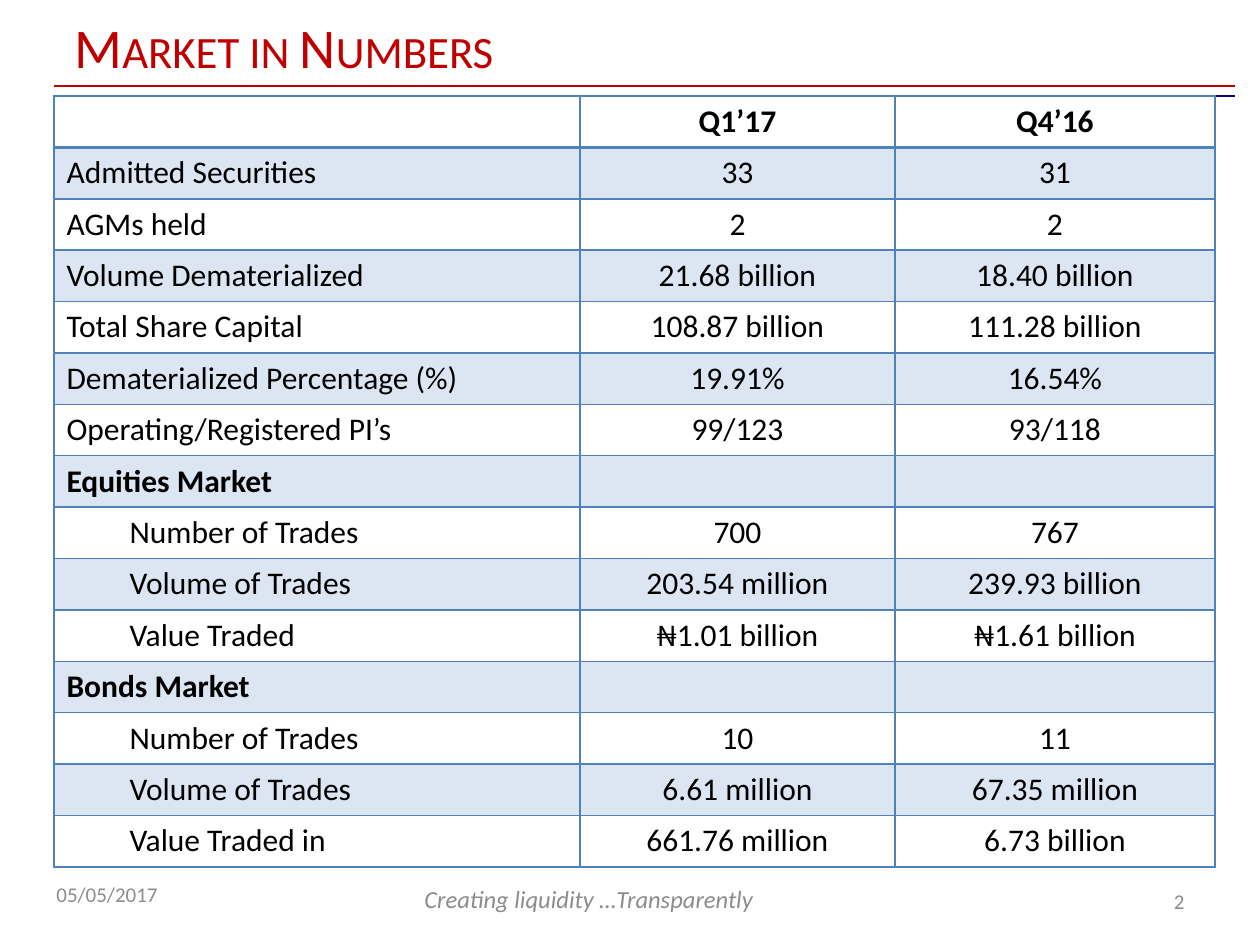
import dataclasses

import lxml.etree
import pptx
import pptx.dml.color
import pptx.enum.shapes
import pptx.enum.text
import pptx.oxml.ns
import pptx.util

ALIGN = pptx.enum.text.PP_ALIGN
ANCHOR = pptx.enum.text.MSO_ANCHOR
qn = pptx.oxml.ns.qn


@dataclasses.dataclass(frozen=True)
class Theme:
    font: str = "Calibri"
    title: str = "C00000"
    rule: str = "0A0571"
    ink: str = "000000"
    muted: str = "8C8C8C"
    grid: str = "4F81BD"
    band: str = "DCE6F2"
    title_size: int = 32
    table_size: int = 18
    tagline_size: int = 14
    footer_size: int = 12
    line: float = 0.75
    border: int = 1
    header_border: int = 2


def px(n):
    return round(n * 914400 / 126)


def rgb(color):
    return pptx.dml.color.RGBColor.from_string(color)


def put_text(tf, text, font, size, color, bold=False, italic=False,
             small_caps=False, align=ALIGN.LEFT, indent=0):
    p = tf.paragraphs[0]
    p.alignment = align
    if indent:
        p.level = 1
        pPr = p._p.get_or_add_pPr()
        pPr.set("marL", str(px(indent)))
        pPr.set("indent", "0")
    r = p.add_run()
    r.text = text
    r.font.name = font
    r.font.size = pptx.util.Pt(size)
    r.font.color.rgb = rgb(color)
    r.font.bold = bold
    r.font.italic = italic
    if small_caps:
        r.font._element.set("cap", "small")


class SlideBuilder:
    def __init__(self, prs, theme):
        self.theme = theme
        self.s = prs.slides.add_slide(prs.slide_layouts[6])

    def rule(self, x1, x2, y, color):
        sp = self.s.shapes.add_connector(
            pptx.enum.shapes.MSO_CONNECTOR.STRAIGHT, px(x1), px(y), px(x2), px(y))
        sp.line.color.rgb = rgb(color)
        sp.line.width = pptx.util.Pt(self.theme.line)
        lxml.etree.SubElement(sp._element.spPr, qn("a:effectLst"))

    def text(self, x, y, w, h, text, size, color, anchor=ANCHOR.MIDDLE, **fmt):
        tf = self.s.shapes.add_textbox(px(x), px(y), px(w), px(h)).text_frame
        tf.word_wrap = True
        tf.vertical_anchor = anchor
        put_text(tf, text, self.theme.font, size, color, **fmt)

    def borders(self, cell, **widths):
        tcPr = cell._tc.get_or_add_tcPr()
        for side in ("L", "R", "T", "B"):
            width = pptx.util.Pt(widths.get(side, self.theme.border))
            ln = lxml.etree.SubElement(tcPr, qn("a:ln" + side), w=str(width))
            fill = lxml.etree.SubElement(ln, qn("a:solidFill"))
            lxml.etree.SubElement(fill, qn("a:srgbClr"), val=self.theme.grid)

    def table(self, x, y, h, widths, rows, sections, indent):
        t = self.theme
        table = self.s.shapes.add_table(
            len(rows), len(widths), px(x), px(y), px(sum(widths)), px(h)).table
        table.first_row = table.horz_banding = False
        for col, width in zip(table.columns, widths):
            col.width = px(width)
        in_section = False
        for i, row in enumerate(rows):
            table.rows[i].height = px(h / len(rows))
            heading = row[0] in sections
            for j, text in enumerate(row):
                cell = table.cell(i, j)
                edge = {0: "B", 1: "T"}.get(i)
                self.borders(cell, **({edge: t.header_border} if edge else {}))
                if i % 2:
                    cell.fill.solid()
                    cell.fill.fore_color.rgb = rgb(t.band)
                else:
                    cell.fill.background()
                if text:
                    put_text(cell.text_frame, text, t.font, t.table_size, t.ink,
                             bold=i == 0 or heading,
                             align=ALIGN.CENTER if j else ALIGN.LEFT,
                             indent=indent if in_section and not heading and j == 0 else 0)
            in_section = in_section or heading


ROWS = [
    ("", "Q1’17", "Q4’16"),
    ("Admitted Securities", "33", "31"),
    ("AGMs held", "2", "2"),
    ("Volume Dematerialized", "21.68 billion", "18.40 billion"),
    ("Total Share Capital", "108.87 billion", "111.28 billion"),
    ("Dematerialized Percentage (%)", "19.91%", "16.54%"),
    ("Operating/Registered PI’s", "99/123", "93/118"),
    ("Equities Market", "", ""),
    ("Number of Trades", "700", "767"),
    ("Volume of Trades", "203.54 million", "239.93 billion"),
    ("Value Traded", "₦1.01 billion", "₦1.61 billion"),
    ("Bonds Market", "", ""),
    ("Number of Trades", "10", "11"),
    ("Volume of Trades", "6.61 million", "67.35 million"),
    ("Value Traded in", "661.76 million", "6.73 billion"),
]


def main():
    prs = pptx.Presentation()
    prs.slide_width, prs.slide_height = px(1260), px(945)
    t = Theme()
    b = SlideBuilder(prs, t)
    b.rule(54, 1235, 96, t.rule)
    b.rule(54, 1235, 86, t.title)
    b.text(412, 878, 399, 50, "Creating liquidity …Transparently",
           t.tagline_size, t.muted, anchor=ANCHOR.TOP, italic=True)
    b.text(44, 869, 294, 50, "05/05/2017", t.footer_size, t.muted)
    b.text(62, 8, 1003, 77, "Market in Numbers", t.title_size, t.title, small_caps=True)
    b.text(903, 876, 294, 50, "2", t.footer_size, t.muted, align=ALIGN.RIGHT)
    b.table(54, 96, 771, (526, 315, 320), ROWS,
            sections=("Equities Market", "Bonds Market"), indent=63)
    prs.save("out.pptx")


if __name__ == "__main__":
    main()
